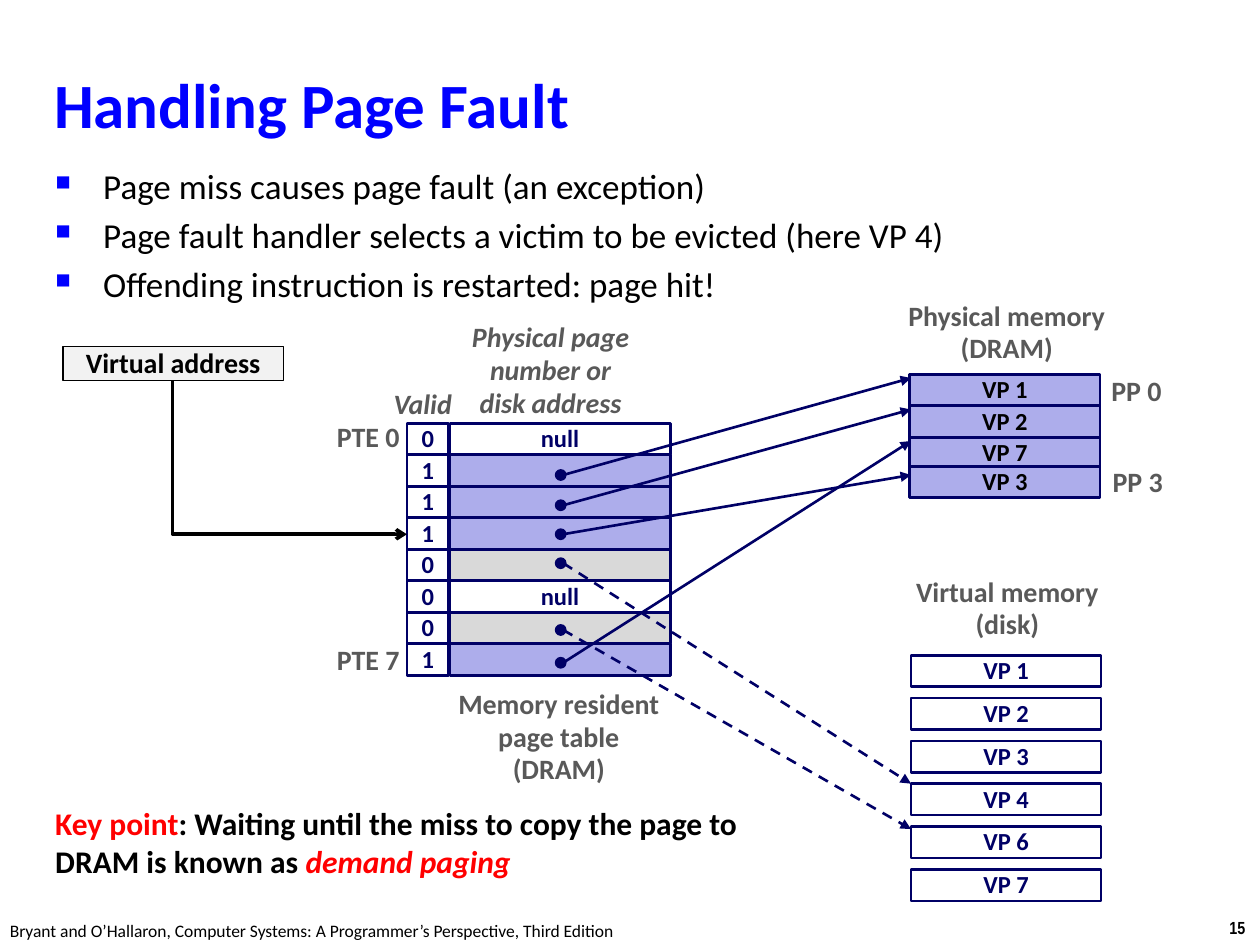
"""Build a slide that explains how a page fault is handled."""
from lxml.etree import SubElement
from pptx import Presentation
from pptx.dml.color import RGBColor
from pptx.enum.dml import MSO_LINE
from pptx.enum.shapes import MSO_CONNECTOR as CONN, MSO_SHAPE as SHAPE
from pptx.enum.text import MSO_ANCHOR as ANCHOR, PP_ALIGN as ALIGN
from pptx.oxml.ns import qn
from pptx.util import Inches, Pt

BLACK = RGBColor(0x00, 0x00, 0x00)
WHITE = RGBColor(0xFF, 0xFF, 0xFF)
BLUE = RGBColor(0x00, 0x00, 0xFF)
RED = RGBColor(0xFF, 0x00, 0x00)
NAVY = RGBColor(0x00, 0x00, 0x66)
LILAC = RGBColor(0xAD, 0xAD, 0xEB)
GRAY = RGBColor(0xD9, 0xD9, 0xD9)
PALE = RGBColor(0xF2, 0xF2, 0xF2)
DARK_GRAY = RGBColor(0x59, 0x59, 0x59)

BASE = dict(name="Calibri", size=Pt(14), bold=True, color=NAVY)
LABEL = dict(size=Pt(16), color=DARK_GRAY)
ITALIC = dict(LABEL, italic=True)
SMALL = dict(size=Pt(10), bold=False, color=BLACK)

ROW_H = 0.25
TABLE_TOP = 3.36
VALID_X, VALID_W = 3.23, 0.33
ENTRY_X, ENTRY_W = 3.57, 1.75
DOT_X, DOT_SIZE = 4.45, 0.08
MEMORY_X, MEMORY_W = 7.23, 1.51
DISK_TOP, DISK_STEP = 5.2, 0.34

BULLETS = [
    "Page miss causes page fault (an exception)",
    "Page fault handler selects a victim to be evicted (here VP 4)",
    "Offending instruction is restarted: page hit!",
]
PAGE_TABLE = [
    ("0", "null", WHITE), ("1", "", LILAC), ("1", "", LILAC), ("1", "", LILAC),
    ("0", "", GRAY), ("0", "null", WHITE), ("0", "", GRAY), ("1", "", LILAC),
]
PHYSICAL_PAGES = [("VP 1", 2.97), ("VP 2", 3.22), ("VP 7", 3.47), ("VP 3", 3.7)]
DISK_PAGES = ["VP 1", "VP 2", "VP 3", "VP 4", "VP 6", "VP 7"]
POINTERS = [
    (3.77, 3.0, False), (4.01, 3.25, False), (4.24, 3.77, False),
    (4.47, 6.22, True), (5.0, 6.58, True), (5.26, 3.5, False),
]
LABELS = [
    (["Memory resident", "page table", "(DRAM)"], (3.51, 5.41, 1.85, 0.89), LABEL),
    (["Physical memory", "(DRAM)"], (7.1, 2.33, 1.78, 0.63), LABEL),
    (["Virtual memory", "(disk)"], (7.15, 4.52, 1.69, 0.63), LABEL),
    (["Physical page", "number or", "disk address"], (3.64, 2.5, 1.46, 0.89), ITALIC),
    (["Valid"], (2.98, 3.03, 0.75, 0.37), ITALIC),
    (["PP 0"], (8.72, 2.93, 0.6, 0.37), LABEL),
    (["PP 3"], (8.73, 3.65, 0.6, 0.37), LABEL),
]


def write(tf, lines, fmt, align=ALIGN.LEFT, spacing=None):
    """Fill a text frame; a line is a string or a list of (text, format) runs."""
    for i, line in enumerate(lines):
        p = tf.paragraphs[0] if i == 0 else tf.add_paragraph()
        p.alignment = align
        p.line_spacing = spacing
        for text, extra in [(line, {})] if isinstance(line, str) else line:
            r = p.add_run()
            r.text = text
            for key, value in {**BASE, **fmt, **extra}.items():
                if key == "color":
                    r.font.color.rgb = value
                else:
                    setattr(r.font, key, value)


def add_text(s, lines, box, fmt, wrap=False, **layout):
    """Add a text box and return its text frame."""
    tf = s.shapes.add_textbox(*map(Inches, box)).text_frame
    tf.word_wrap = wrap
    write(tf, lines, fmt, **layout)
    return tf


def add_box(s, box, fill, text="", fmt=BASE, line=NAVY, width=1.5, kind=SHAPE.RECTANGLE):
    """Add an outlined shape with optional centred text."""
    sp = s.shapes.add_shape(kind, *map(Inches, box))
    sp.shadow.inherit = False
    sp.fill.solid()
    sp.fill.fore_color.rgb = fill
    sp.line.color.rgb = line
    sp.line.width = Pt(width)
    if text:
        tf = sp.text_frame
        tf.word_wrap = False
        tf.vertical_anchor = ANCHOR.MIDDLE
        write(tf, [text], fmt, ALIGN.CENTER, 0.98)


def add_arrow(s, start, end, color=NAVY, width=1.5, dashed=False, head="triangle", kind=CONN.STRAIGHT):
    """Add a connector with an arrowhead at its end."""
    c = s.shapes.add_connector(kind, *map(Inches, start + end))
    c.line.color.rgb = color
    c.line.width = Pt(width)
    if dashed:
        c.line.dash_style = MSO_LINE.DASH
    SubElement(c.line._get_or_add_ln(), qn("a:tailEnd"), type=head)
    SubElement(c._element.spPr, qn("a:effectLst"))
    return c


def add_title(s, text):
    """Place and format the title placeholder."""
    sp = s.shapes.title
    sp.left, sp.top, sp.width, sp.height = map(Inches, (0.33, 0.39, 9.06, 0.86))
    sp.text_frame.vertical_anchor = ANCHOR.MIDDLE
    write(sp.text_frame, [text], dict(size=Pt(36), color=BLUE))


def add_bullets(s):
    """Add the list of square-bulleted points."""
    fmt = dict(size=Pt(20), bold=False, color=BLACK)
    tf = add_text(s, BULLETS, (0.34, 1.26, 9.09, 1.25), fmt, wrap=True)
    for p in tf.paragraphs:
        p.space_before = Pt(4)
        pPr = p._p.get_or_add_pPr()
        pPr.set("marL", str(Inches(0.38)))
        pPr.set("indent", str(Inches(-0.38)))
        SubElement(SubElement(pPr, qn("a:buClr")), qn("a:srgbClr"), val=str(BLUE))
        SubElement(pPr, qn("a:buSzPct"), val="60000")
        SubElement(pPr, qn("a:buChar"), char="■")


def add_page_table(s):
    """Draw the valid bits and entries of the page table."""
    for i, (valid, entry, fill) in enumerate(PAGE_TABLE):
        top = TABLE_TOP + i * ROW_H
        add_box(s, (ENTRY_X, top, ENTRY_W, ROW_H), fill, entry)
        add_box(s, (VALID_X, top, VALID_W, ROW_H), WHITE, valid)
    for text, top in (("PTE 0", 3.29), ("PTE 7", 5.06)):
        add_text(s, [text], (2.57, top, 0.7, 0.37), LABEL, wrap=True, align=ALIGN.RIGHT, spacing=0.98)


def add_memories(s):
    """Draw the pages held in DRAM and on disk."""
    for text, top in PHYSICAL_PAGES:
        add_box(s, (MEMORY_X - 0.01, top, MEMORY_W, ROW_H), LILAC, text, dict(color=BLACK))
    for i, text in enumerate(DISK_PAGES):
        add_box(s, (MEMORY_X, DISK_TOP + i * DISK_STEP, MEMORY_W, ROW_H), WHITE, text)


def add_pointers(s):
    """Link the page table entries to their pages."""
    for start_y, end_y, dashed in POINTERS:
        add_arrow(s, (DOT_X + 0.02, start_y), (MEMORY_X, end_y), dashed=dashed)
        corner = (DOT_X - DOT_SIZE / 2, start_y - DOT_SIZE / 2)
        add_box(s, corner + (DOT_SIZE, DOT_SIZE), NAVY, width=1, kind=SHAPE.OVAL)


def add_virtual_address(s):
    """Draw the virtual address and its one-bend arrow to the table."""
    fmt = dict(size=Pt(16), color=BLACK)
    add_box(s, (0.5, 2.75, 1.75, 0.27), PALE, "Virtual address", fmt, BLACK, 1)
    c = add_arrow(s, (2.91, 2.7), (1.69, 4.56), BLACK, 2, head="arrow", kind=CONN.ELBOW)
    spPr = c._element.spPr
    spPr.find(qn("a:xfrm")).set("rot", str(270 * 60000))
    spPr.find(qn("a:prstGeom")).set("prst", "bentConnector2")


def main():
    """Build and save the slide."""
    prs = Presentation()
    prs.slide_width, prs.slide_height = Inches(10), Inches(7.5)
    s = prs.slides.add_slide(prs.slide_layouts[5])
    add_title(s, "Handling Page Fault")
    add_bullets(s)
    add_page_table(s)
    add_memories(s)
    add_pointers(s)
    for lines, box, fmt in LABELS:
        add_text(s, lines, box, fmt, align=ALIGN.CENTER, spacing=0.98)
    add_virtual_address(s)
    key_point = [
        ("Key point", dict(color=RED)),
        (": Waiting until the miss to copy the page to DRAM is known as ", {}),
        ("demand paging", dict(color=RED, italic=True)),
    ]
    add_text(s, [key_point], (0.34, 6.33, 6.33, 0.71), dict(size=Pt(18), color=BLACK), wrap=True)
    source = "Bryant and O’Hallaron, Computer Systems: A Programmer’s Perspective, Third Edition"
    add_text(s, [source], (-0.02, 7.25, 5.08, 0.27), SMALL)
    add_text(s, ["15"], (9.66, 7.23, 0.34, 0.27), dict(SMALL, name="Arial Narrow", bold=True))
    prs.save("out.pptx")


if __name__ == "__main__":
    main()
